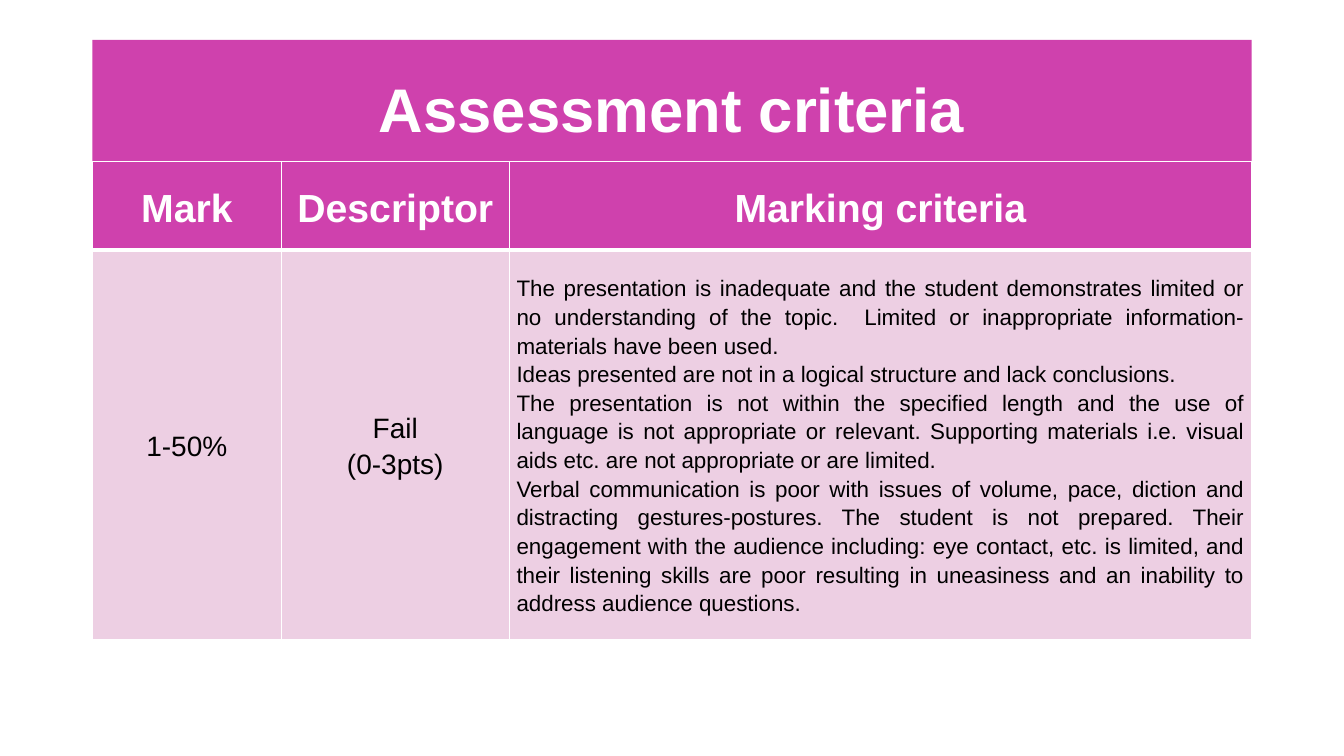
from dataclasses import dataclass

from lxml import etree
from pptx import Presentation
from pptx import util as u
from pptx.dml.color import RGBColor
from pptx.enum import text as t
from pptx.oxml.ns import qn

PX = 9525
LEFT, WIDTH = 88, 1104
COLS = [180, 217, 707]
ROWS = [84, 371]
PAD = 7

PINK = RGBColor(0xCF, 0x41, 0xAD)
PALE = RGBColor(0xED, 0xCF, 0xE3)
WHITE = RGBColor(0xFF, 0xFF, 0xFF)
BLACK = RGBColor(0, 0, 0)
MID = t.PP_ALIGN.CENTER
FULL = t.PP_ALIGN.JUSTIFY


@dataclass
class Style:
    size: int
    ink: RGBColor
    bold: bool
    align: t.PP_ALIGN = MID
    space: float = 1.15


@dataclass
class Entry:
    lines: list[str]
    style: Style


TITLE = Style(44, WHITE, True, space=0.9)
HEAD = Style(28, WHITE, True)
BODY = Style(20, BLACK, False)
PROSE = Style(16, BLACK, False, FULL)

GRID = [
    [Entry([name], HEAD) for name in ("Mark", "Descriptor", "Marking criteria")],
    [
        Entry(["1-50%"], BODY),
        Entry(["Fail", "(0-3pts)"], BODY),
        Entry([
            "The presentation is inadequate and the student demonstrates limited or "
            "no understanding of the topic.  Limited or inappropriate "
            "information-materials have been used.",
            "Ideas presented are not in a logical structure and lack conclusions.",
            "The presentation is not within the specified length and the use of "
            "language is not appropriate or relevant. Supporting materials i.e. "
            "visual aids etc. are not appropriate or are limited.",
            "Verbal communication is poor with issues of volume, pace, diction and "
            "distracting gestures-postures. The student is not prepared. Their "
            "engagement with the audience including: eye contact, etc. is limited, "
            "and their listening skills are poor resulting in uneasiness and an "
            "inability to address audience questions.",
        ], PROSE),
    ],
]
FILLS = [PINK, PALE]
EDGES = [
    {"lnL": 1, "lnR": 1, "lnT": 1, "lnB": 3},
    {"lnL": 1, "lnR": 1, "lnT": 3, "lnB": 1},
]


def px(num: int) -> u.Emu:
    return u.Emu(num * PX)


def write(frame, lines: list[str], style: Style) -> None:
    frame.text = "\n".join(lines)
    for para in frame.paragraphs:
        para.alignment = style.align
        para.line_spacing = style.space
        para.space_before = para.space_after = u.Pt(0)
        font = para.font
        font.name = "Arial"
        font.size = u.Pt(style.size)
        font.bold = style.bold
        font.color.rgb = style.ink


def edge(cell, sides: dict[str, int]) -> None:
    props = cell._tc.get_or_add_tcPr()
    for spot, (side, width) in enumerate(sides.items()):
        line = etree.Element(qn(f"a:{side}"), w=str(u.Pt(width)))
        fill = etree.SubElement(line, qn("a:solidFill"))
        etree.SubElement(fill, qn("a:srgbClr"), val=str(WHITE))
        props.insert(spot, line)


def add_title(slide) -> None:
    title = slide.shapes.title
    title.left, title.top = px(LEFT), px(38)
    title.width, title.height = px(WIDTH), px(139)
    title.fill.solid()
    title.fill.fore_color.rgb = PINK
    frame = title.text_frame
    frame.word_wrap = True
    frame.auto_size = t.MSO_AUTO_SIZE.NONE
    frame.vertical_anchor = t.MSO_ANCHOR.MIDDLE
    write(frame, ["Assessment criteria"], TITLE)


def add_grid(slide) -> None:
    table = slide.shapes.add_table(
        len(ROWS), len(COLS), px(LEFT), px(154), px(WIDTH), px(sum(ROWS))
    ).table
    for col, width in zip(table.columns, COLS):
        col.width = px(width)
    for row, high, items, fill, sides in zip(table.rows, ROWS, GRID, FILLS, EDGES):
        row.height = px(high)
        for cell, item in zip(row.cells, items):
            cell.fill.solid()
            cell.fill.fore_color.rgb = fill
            cell.margin_left = cell.margin_right = px(PAD)
            cell.margin_top = cell.margin_bottom = 0
            cell.vertical_anchor = t.MSO_ANCHOR.MIDDLE
            write(cell.text_frame, item.lines, item.style)
            edge(cell, sides)


def main() -> None:
    deck = Presentation()
    deck.slide_width, deck.slide_height = px(1280), px(720)
    slide = deck.slides.add_slide(deck.slide_layouts[5])
    add_title(slide)
    add_grid(slide)
    deck.save("out.pptx")


if __name__ == "__main__":
    main()
